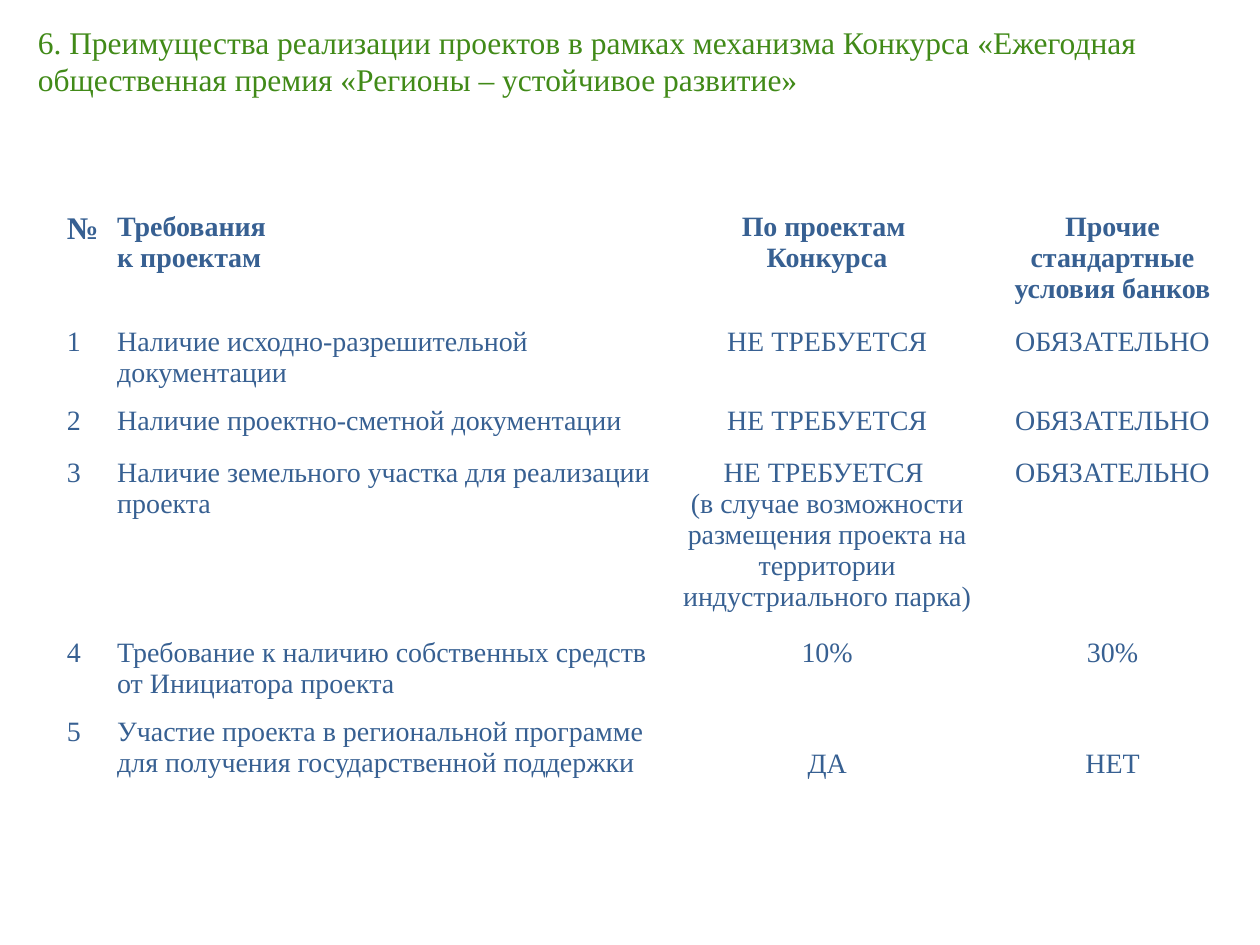
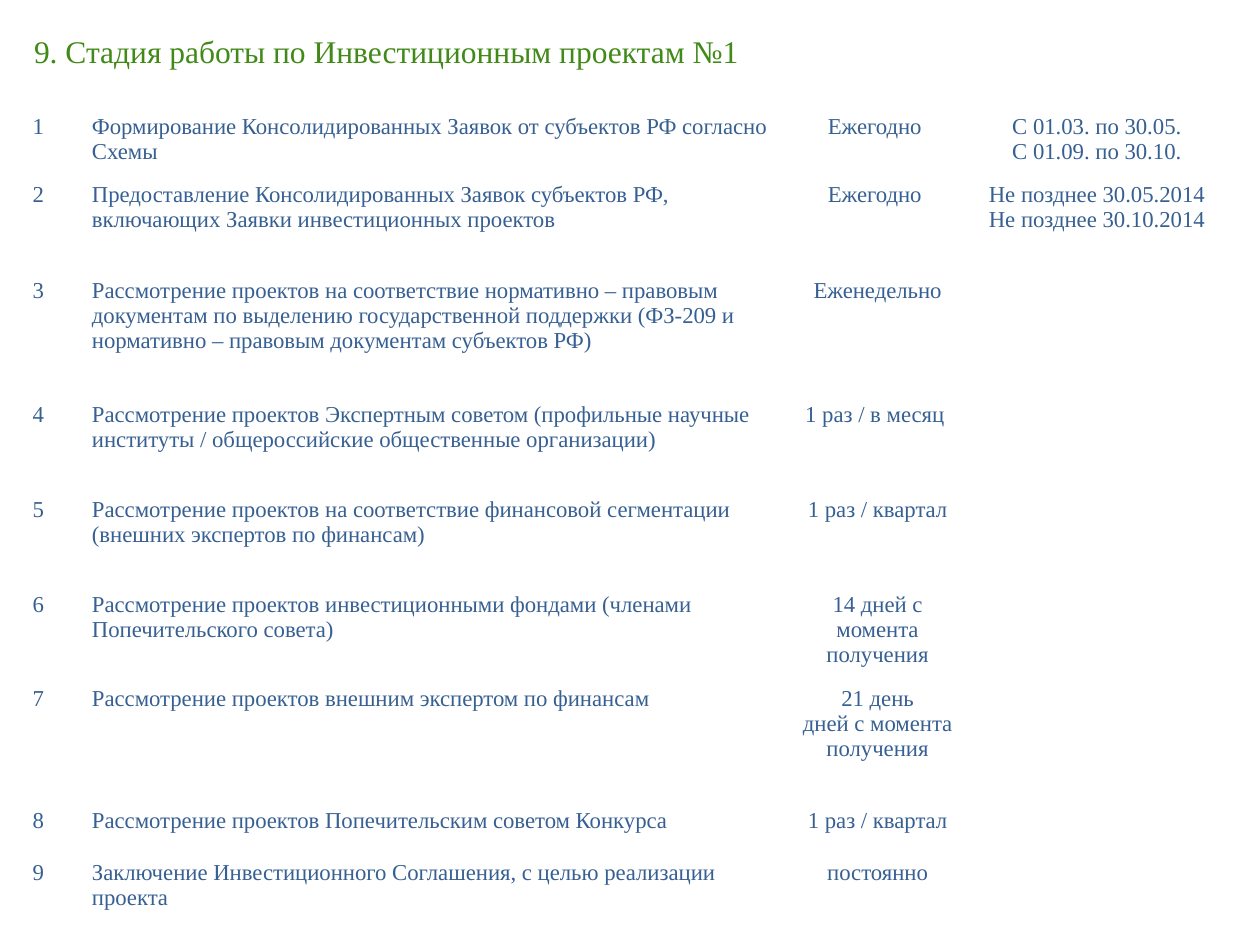
from pptx import Presentation
from pptx.dml.color import RGBColor
from pptx.enum.text import MSO_ANCHOR, MSO_AUTO_SIZE, PP_ALIGN
from pptx.util import Inches, Pt

FONT = "Times New Roman"
GREEN = RGBColor(0x41, 0x8A, 0x18)
BLUE = RGBColor(0x37, 0x60, 0x92)
WHITE = RGBColor(0xFF, 0xFF, 0xFF)
LEFT, CENTER = PP_ALIGN.LEFT, PP_ALIGN.CENTER
TOP, NO_FIT = MSO_ANCHOR.TOP, MSO_AUTO_SIZE.NONE
TITLE_ONLY = 5
ALIGNS = (LEFT, LEFT, CENTER, CENTER)
NOT_NEEDED, NEEDED = "НЕ ТРЕБУЕТСЯ", "ОБЯЗАТЕЛЬНО"
YEARLY, QUARTERLY = "Ежегодно ", "1 раз / квартал"

TERMS_HEAD = (
    "№",
    "Требования \nк проектам",
    "По проектам \nКонкурса",
    "Прочие стандартные условия банков",
)
TERMS = [
    ("Наличие исходно-разрешительной документации", NOT_NEEDED, NEEDED),
    ("Наличие проектно-сметной документации", NOT_NEEDED, NEEDED),
    ("Наличие земельного участка для реализации проекта",
     NOT_NEEDED + " \n(в случае возможности размещения проекта "
     "на территории индустриального парка)", NEEDED),
    ("Требование к наличию собственных средств от Инициатора проекта",
     "10%", "30%"),
    ("Участие проекта в региональной программе для получения "
     "государственной поддержки", "ДА", "НЕТ"),
]
STAGES = [
    ("Формирование Консолидированных Заявок от субъектов РФ согласно Схемы",
     YEARLY, "С 01.03. по 30.05.\nС 01.09. по 30.10."),
    ("Предоставление Консолидированных Заявок субъектов РФ, включающих "
     "Заявки инвестиционных проектов",
     YEARLY, "Не позднее 30.05.2014\nНе позднее 30.10.2014"),
    ("Рассмотрение проектов на соответствие нормативно – правовым документам "
     "по выделению государственной поддержки (ФЗ-209 и нормативно – правовым "
     "документам субъектов РФ)", "Еженедельно", ""),
    ("Рассмотрение проектов Экспертным советом (профильные научные институты "
     "/ общероссийские общественные организации)", "1 раз / в месяц ", ""),
    ("Рассмотрение проектов на соответствие финансовой сегментации "
     "(внешних экспертов по финансам)", QUARTERLY, ""),
    ("Рассмотрение проектов инвестиционными фондами "
     "(членами Попечительского совета)", "14 дней с момента получения", ""),
    ("Рассмотрение проектов внешним экспертом по финансам",
     "21 день\nдней с момента получения", ""),
    ("Рассмотрение проектов Попечительским советом Конкурса", QUARTERLY, ""),
    ("Заключение Инвестиционного Соглашения, с целью реализации проекта",
     "постоянно", ""),
]


def number(rows):
    """Put the running number before each row."""
    return [(str(i), *row) for i, row in enumerate(rows, 1)]


class Deck:
    def __init__(self):
        self.prs = Presentation()
        self.prs.slide_width, self.prs.slide_height = Inches(10), Inches(7.5)
        self.slide = None

    def style(self, frame, size, color, align=LEFT, bold=False):
        for para in frame.paragraphs:
            para.alignment = align
            font = para.font
            font.name, font.size, font.bold = FONT, Pt(size), bold
            font.color.rgb = color

    def add(self, text, x, y, w, h):
        """Start a slide with its title."""
        layout = self.prs.slide_layouts[TITLE_ONLY]
        self.slide = self.prs.slides.add_slide(layout)
        title = self.slide.shapes.title
        title.left, title.top = Inches(x), Inches(y)
        title.width, title.height = Inches(w), Inches(h)
        frame = title.text_frame
        frame.text = text
        frame.word_wrap, frame.auto_size = True, NO_FIT
        frame.vertical_anchor = TOP
        self.style(frame, 18, GREEN)

    def table(self, rows, x, y, widths, heights, size, head=False):
        """Draw a plain white table; head makes the first row bold."""
        grid = self.slide.shapes.add_table(
            len(rows), len(widths), Inches(x), Inches(y),
            Inches(sum(widths)), Inches(sum(heights))).table
        grid.horz_banding = False
        for col, width in zip(grid.columns, widths):
            col.width = Inches(width)
        for row, height in zip(grid.rows, heights):
            row.height = Inches(height)
        for r, row in enumerate(rows):
            for c, (text, align) in enumerate(zip(row, ALIGNS)):
                cell = grid.cell(r, c)
                cell.fill.solid()
                cell.fill.fore_color.rgb = WHITE
                cell.text = text
                self.style(cell.text_frame, size, BLUE, align, head and r == 0)
        return grid


def main():
    deck = Deck()

    deck.add("6. Преимущества реализации проектов в рамках механизма Конкурса "
             "«Ежегодная общественная премия «Регионы – устойчивое развитие»",
             0.2, 0.13, 9.37, 0.71)
    terms = deck.table([TERMS_HEAD] + number(TERMS), 0.43, 1.63,
                       (0.4, 4.44, 2.59, 1.94),
                       (0.91, 0.63, 0.41, 1.43, 0.63, 0.63), 16, head=True)
    terms.cell(0, 0).text_frame.paragraphs[0].font.size = Pt(18)
    for col in (2, 3):
        terms.cell(len(TERMS), col).margin_top = Inches(0.3)

    deck.add("9. Стадия работы по Инвестиционным проектам №1",
             0.17, 0.2, 6.04, 0.41)
    deck.table(number(STAGES), 0.16, 0.86, (0.47, 5.59, 1.49, 1.99),
               (0.54, 0.76, 0.98, 0.76, 0.75, 0.75, 0.97, 0.41, 0.53), 13)

    deck.prs.save("out.pptx")


if __name__ == "__main__":
    main()
